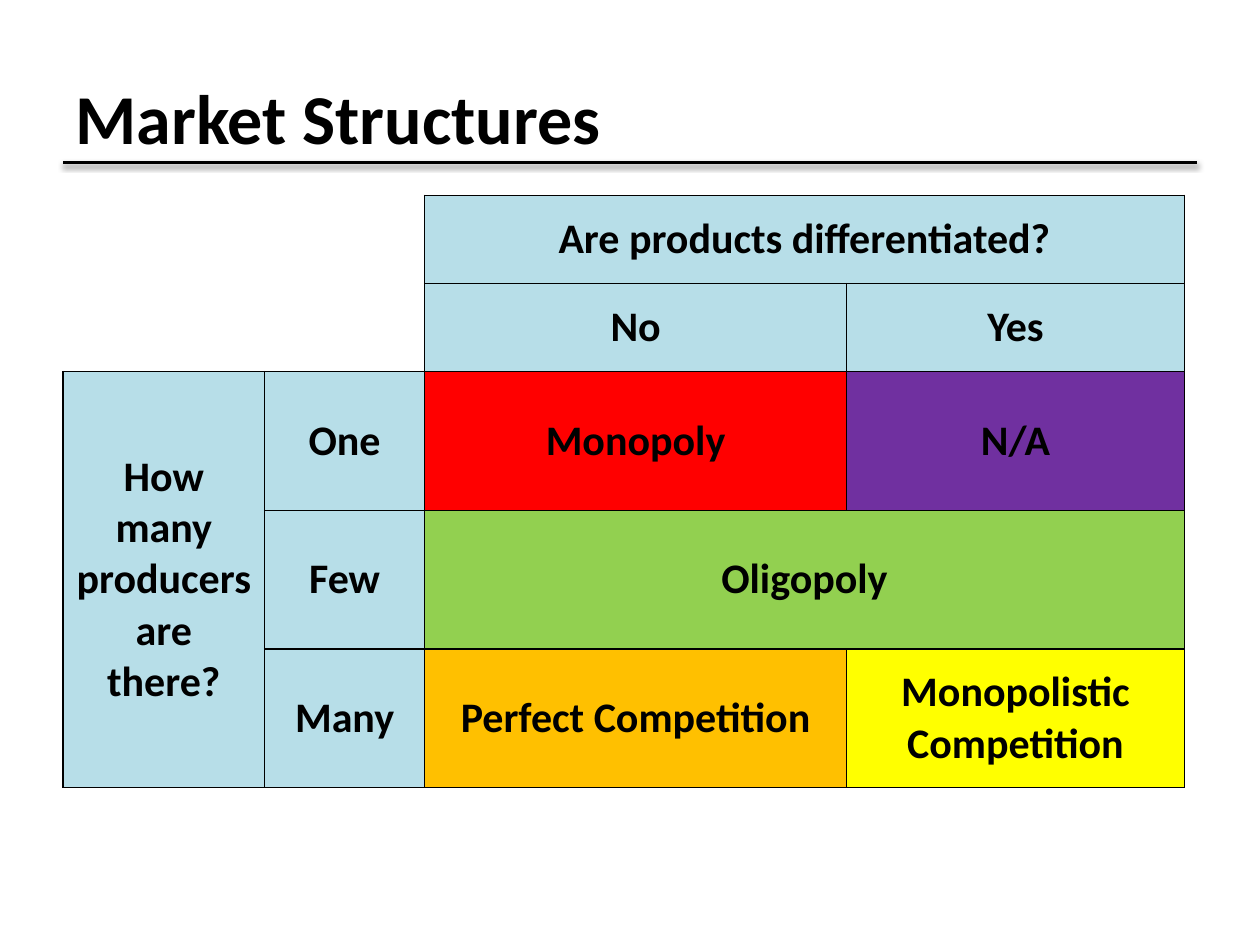
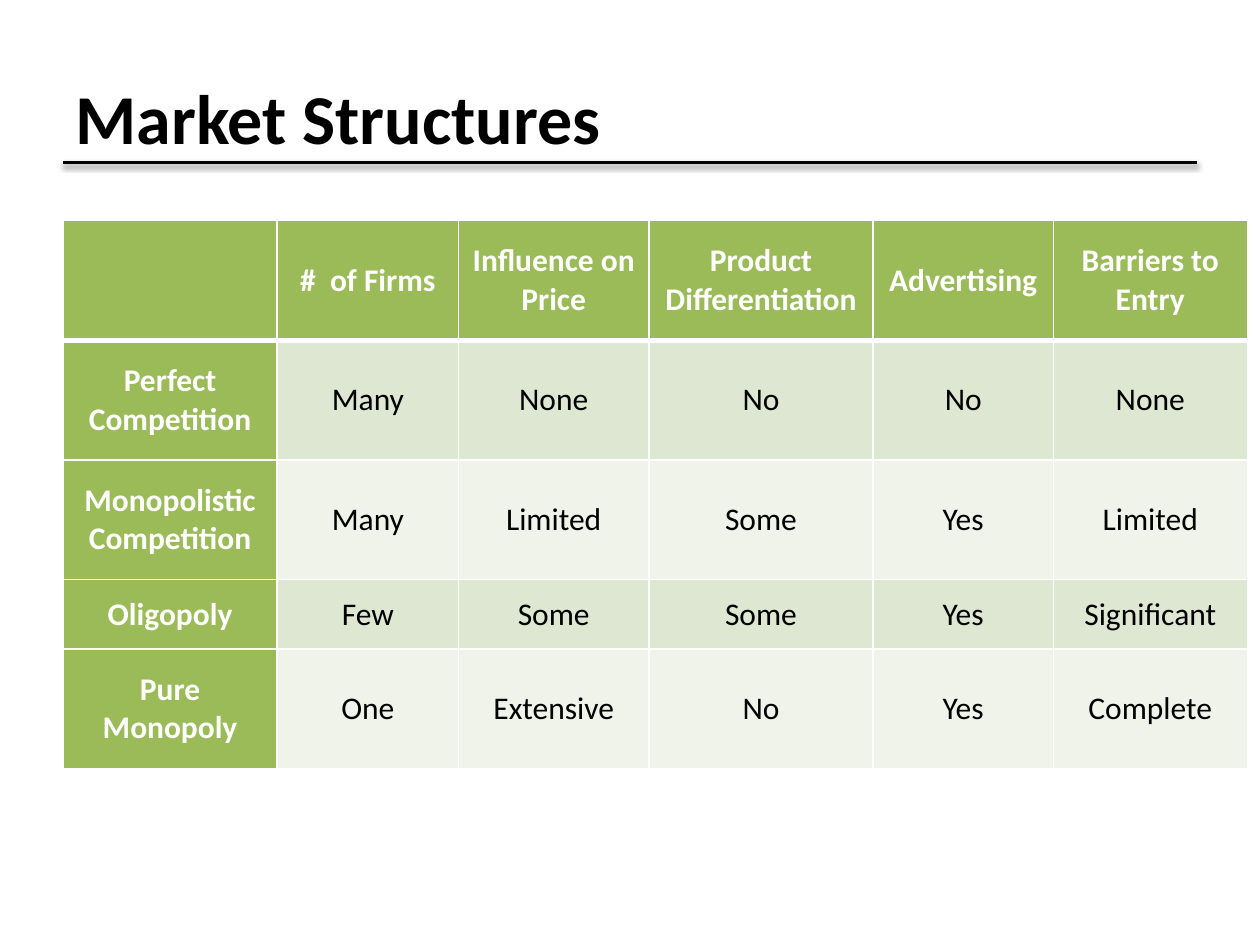
"""Build two slides on market structures: a classification grid and a comparison table."""
from lxml import etree
from pptx import Presentation
from pptx.dml.color import RGBColor
from pptx.enum.shapes import MSO_CONNECTOR
from pptx.enum.text import MSO_ANCHOR, PP_ALIGN
from pptx.oxml import parse_xml
from pptx.oxml.ns import qn
from pptx.util import Inches, Pt

LEFT, CENTER, MIDDLE = PP_ALIGN.LEFT, PP_ALIGN.CENTER, MSO_ANCHOR.MIDDLE
STRAIGHT = MSO_CONNECTOR.STRAIGHT
FONT = "Calibri"
BLACK = RGBColor(0x00, 0x00, 0x00)
WHITE = RGBColor(0xFF, 0xFF, 0xFF)
BLUE = RGBColor(0xB7, 0xDE, 0xE8)
RED = RGBColor(0xFF, 0x00, 0x00)
PURPLE = RGBColor(0x70, 0x30, 0xA0)
LIME = RGBColor(0x92, 0xD0, 0x50)
ORANGE = RGBColor(0xFF, 0xC0, 0x00)
YELLOW = RGBColor(0xFF, 0xFF, 0x00)
GREEN = RGBColor(0x9B, 0xBB, 0x59)
BANDS = (RGBColor(0xDE, 0xE7, 0xD1), RGBColor(0xEF, 0xF3, 0xEA))
NO_STYLE = "{2D5ABB26-0587-4C30-8999-92F81FD0307C}"
SHADOW = (
    '<a:effectLst xmlns:a="http://schemas.openxmlformats.org/drawingml/2006/main">'
    '<a:outerShdw blurRad="39370" dist="20320" dir="5400000" rotWithShape="0">'
    '<a:srgbClr val="000000"><a:alpha val="38000"/></a:srgbClr>'
    '</a:outerShdw></a:effectLst>'
)


def add_table_slide(prs, top, cols, rows):
    """Add a titled, ruled slide and return its unstyled table."""
    s = prs.slides.add_slide(prs.slide_layouts[5])
    rule = s.shapes.add_connector(STRAIGHT, Inches(0.5), Inches(1.29), Inches(9.5), Inches(1.29))
    rule.line.color.rgb = BLACK
    rule.line.width = Pt(2)
    rule._element.spPr.append(parse_xml(SHADOW))
    title = s.shapes.title
    title.left, title.top, title.width, title.height = map(Inches, (0.5, 0.3, 9, 1.25))
    tf = title.text_frame
    tf.text = "Market Structures"
    tf.vertical_anchor = MIDDLE
    p = tf.paragraphs[0]
    p.alignment = LEFT
    p.font.name, p.font.size, p.font.bold = FONT, Pt(40), True
    p.font.color.rgb = BLACK
    frame = s.shapes.add_table(len(rows), len(cols), Inches(0.5), Inches(top),
                               Inches(sum(cols)), Inches(sum(rows)))
    table = frame.table
    table.first_row = table.horz_banding = False
    table._tbl.tblPr.find(qn("a:tableStyleId")).text = NO_STYLE
    for col, width in zip(table.columns, cols):
        col.width = Inches(width)
    for row, height in zip(table.rows, rows):
        row.height = Inches(height)
    return table


def format_cell(cell, text, size, color, bold, fill, borders):
    """Set borders as {side: points}, then the fill and centred text of a cell."""
    tcPr = cell._tc.get_or_add_tcPr()
    line_color = WHITE if size == 18 else BLACK
    for side, points in borders.items():
        ln = etree.SubElement(tcPr, qn(f"a:ln{side}"), w=str(Pt(points)))
        solid = etree.SubElement(ln, qn("a:solidFill"))
        etree.SubElement(solid, qn("a:srgbClr"), val=str(line_color))
    if fill is None:
        cell.fill.background()
    else:
        cell.fill.solid()
        cell.fill.fore_color.rgb = fill
    cell.vertical_anchor = MIDDLE
    cell.text = text
    p = cell.text_frame.paragraphs[0]
    p.alignment = CENTER
    p.font.name, p.font.size, p.font.bold = FONT, Pt(size), bold
    p.font.color.rgb = color


prs = Presentation()
prs.slide_width, prs.slide_height = Inches(10), Inches(7.5)
all_sides = dict.fromkeys("LRTB", 1)

table = add_table_slide(prs, 1.55, (1.6, 1.27, 3.35, 2.68), (0.7, 0.7, 1.1, 1.1, 1.1))
blocks = [
    (0, 0, 1, 2, "", None, {"R": 1}),
    (0, 2, 1, 2, "Are products differentiated?", BLUE, all_sides),
    (1, 0, 1, 2, "", None, {"R": 1, "B": 1}),
    (1, 2, 1, 1, "No", BLUE, all_sides),
    (1, 3, 1, 1, "Yes", BLUE, all_sides),
    (2, 0, 3, 1, "How many producers are there?", BLUE, all_sides),
    (2, 1, 1, 1, "One", BLUE, all_sides),
    (2, 2, 1, 1, "Monopoly", RED, all_sides),
    (2, 3, 1, 1, "N/A", PURPLE, all_sides),
    (3, 1, 1, 1, "Few", BLUE, all_sides),
    (3, 2, 1, 2, "Oligopoly", LIME, all_sides),
    (4, 1, 1, 1, "Many", BLUE, all_sides),
    (4, 2, 1, 1, "Perfect Competition", ORANGE, all_sides),
    (4, 3, 1, 1, "Monopolistic Competition", YELLOW, all_sides),
]
for row, col, height, width, text, fill, borders in blocks:
    for r in range(row, row + height):
        for c in range(col, col + width):
            label = text if (r, c) == (row, col) else ""
            format_cell(table.cell(r, c), label, 24, BLACK, True, fill, borders)
    if height * width > 1:
        table.cell(row, col).merge(table.cell(row + height - 1, col + width - 1))

table = add_table_slide(prs, 1.75, (1.7, 1.44, 1.51, 1.78, 1.43, 1.54),
                        (0.95, 0.95, 0.95, 0.55, 0.95))
comparison = [
    ("", "#  of Firms", "Influence on Price", "Product Differentiation", "Advertising",
     "Barriers to Entry"),
    ("Perfect Competition", "Many", "None", "No", "No", "None"),
    ("Monopolistic Competition", "Many", "Limited", "Some", "Yes", "Limited"),
    ("Oligopoly", "Few", "Some", "Some", "Yes", "Significant"),
    ("Pure Monopoly", "One", "Extensive", "No", "Yes", "Complete"),
]
for r, values in enumerate(comparison):
    borders = {**all_sides, "T": 3 if r == 1 else 1, "B": 3 if r == 0 else 1}
    for c, text in enumerate(values):
        header = r == 0 or c == 0
        fill = GREEN if header else BANDS[(r - 1) % 2]
        format_cell(table.cell(r, c), text, 18, WHITE if header else BLACK, header, fill, borders)

prs.save("out.pptx")
